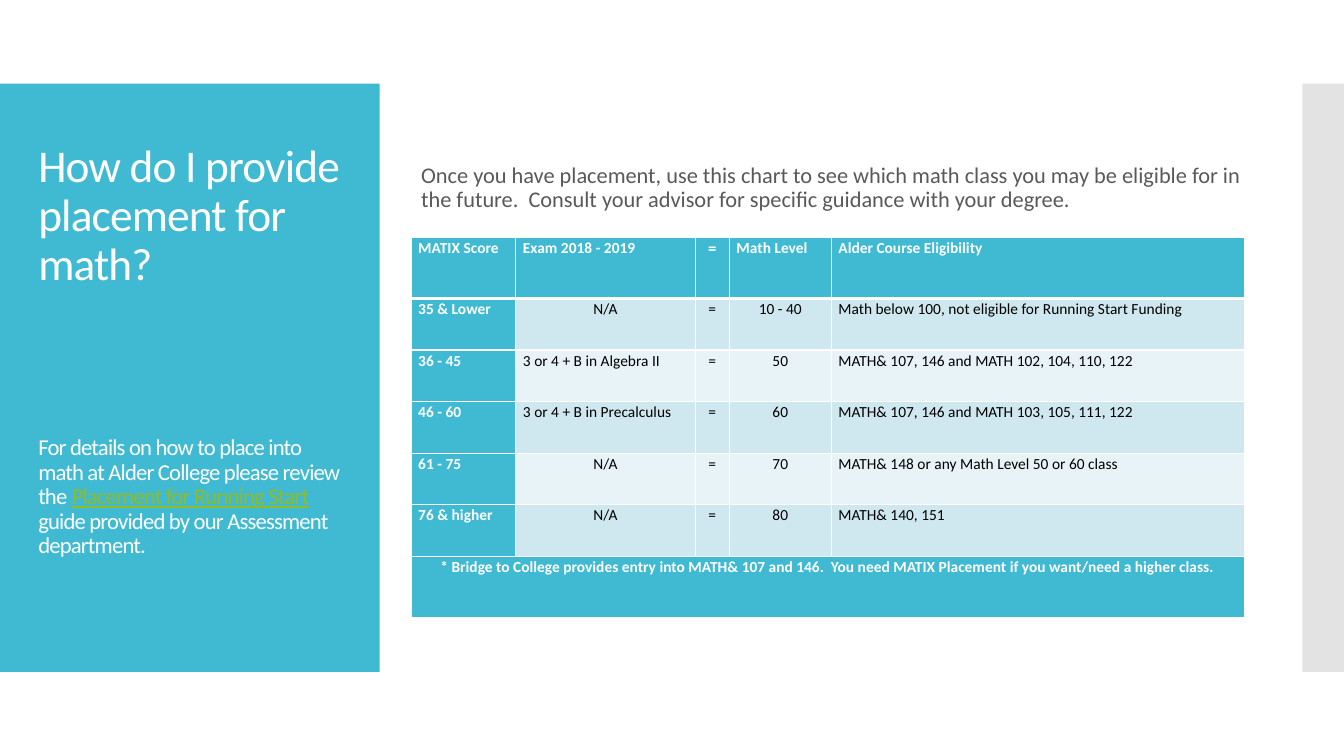
from lxml.etree import SubElement
from pptx import Presentation
from pptx.dml.color import RGBColor
from pptx.enum.shapes import MSO_SHAPE
from pptx.enum.text import MSO_ANCHOR, MSO_AUTO_SIZE, PP_ALIGN
from pptx.oxml.ns import qn
from pptx.util import Cm, Pt

TEAL, WHITE, BLACK = "40BAD2", "FFFFFF", "000000"
BANDS = ("CFE7EE", "E8F3F7")
COLUMN_WIDTHS = (2.64, 4.52, 0.86, 2.57, 10.41)
ROW_HEIGHTS = (1.55, 1.3, 1.3, 1.3, 1.3, 1.3, 1.55)
HEADINGS = ("MATIX Score", "Exam 2018 - 2019", "=", "Math Level",
            "Alder Course Eligibility")
PLACEMENTS = (
    ("35 & Lower", "N/A", "10 - 40",
     "Math below 100, not eligible for Running Start Funding"),
    ("36 - 45", "3 or 4 + B in Algebra II", "50",
     "MATH& 107, 146 and MATH 102, 104, 110, 122"),
    ("46 - 60", "3 or 4 + B in Precalculus", "60",
     "MATH& 107, 146 and MATH 103, 105, 111, 122"),
    ("61 - 75", "N/A", "70", "MATH& 148 or any Math Level 50 or 60 class"),
    ("76 & higher", "N/A", "80", "MATH& 140, 151"),
)
BRIDGE_NOTE = ("* Bridge to College provides entry into MATH& 107 and 146.  "
               "You need MATIX Placement if you want/need a higher class.")


def rgb(value):
    return RGBColor.from_string(value)


def add_text(paragraph, text, size=11, color=BLACK, bold=False, underline=False,
             tracking=0, align=PP_ALIGN.LEFT, spacing=0.9, before=0):
    """Append a run; tracking is in hundredths of a point."""
    paragraph.alignment = align
    paragraph.line_spacing = spacing
    paragraph.space_before = Pt(before)
    run = paragraph.add_run()
    run.text = text
    font = run.font
    font.name, font.size = "Calibri", Pt(size)
    font.bold, font.underline = bold, underline
    font.color.rgb = rgb(color)
    if tracking:
        font._element.set("spc", str(tracking))


def add_panel(slide, left, width, color, opacity=100):
    """Add a side band behind the placeholders."""
    panel = slide.shapes.add_shape(MSO_SHAPE.RECTANGLE, Cm(left), Cm(2.11),
                                   Cm(width), Cm(14.82))
    panel.shadow.inherit = False
    panel.fill.solid()
    panel.fill.fore_color.rgb = rgb(color)
    panel.line.fill.background()
    if opacity < 100:
        tint = panel.element.spPr.find(".//" + qn("a:srgbClr"))
        SubElement(tint, qn("a:alpha"), val=str(opacity * 1000))
    panel.element.getparent().insert(2, panel.element)


def place(placeholder, left, top, width, height, top_inset=0.0):
    placeholder.left, placeholder.top = Cm(left), Cm(top)
    placeholder.width, placeholder.height = Cm(width), Cm(height)
    frame = placeholder.text_frame
    frame.word_wrap = True
    frame.auto_size = MSO_AUTO_SIZE.NONE
    frame.vertical_anchor = MSO_ANCHOR.TOP
    frame.margin_top = Cm(top_inset)
    return frame


def fill_title(title):
    frame = place(title, 0.71, 3.12, 8.18, 12.78, top_inset=0.5)
    add_text(frame.paragraphs[0], "How do I provide placement for math?",
             size=32.4, color=WHITE, tracking=-60)
    details = frame.add_paragraph()
    for text, color, linked in (
            ("For details on how to place into math at Alder College please "
             "review the ", WHITE, False),
            ("Placement for Running Start", "90BB23", True),
            (" guide provided by our Assessment department.", WHITE, False)):
        add_text(details, text, size=16.2, color=color, underline=linked,
                 tracking=-60, before=104)


def fill_intro(body):
    intro = place(body, 10.36, 4.14, 21.67, 1.6).paragraphs[0]
    add_text(intro, "Once you have placement, use this chart to see which math "
             "class you may be eligible for in the future.  Consult your advisor "
             "for specific guidance with your degree.", size=16, color="595959")
    properties = intro._p.get_or_add_pPr()
    properties.set("marL", "0")
    properties.set("indent", "0")
    SubElement(properties, qn("a:buNone"))


def set_borders(cell, bottom=1):
    properties = cell._tc.get_or_add_tcPr()
    for side, width in (("L", 1), ("R", 1), ("T", 1), ("B", bottom)):
        line = SubElement(properties, qn("a:ln" + side), w=str(Pt(width)))
        paint = SubElement(line, qn("a:solidFill"))
        SubElement(paint, qn("a:srgbClr"), val=WHITE)


def fill_cell(cell, text, fill, bottom=1, **text_format):
    set_borders(cell, bottom)
    cell.fill.solid()
    cell.fill.fore_color.rgb = rgb(fill)
    cell.margin_left = cell.margin_right = Cm(0.18)
    cell.margin_top = cell.margin_bottom = 0
    add_text(cell.text_frame.paragraphs[0], text, spacing=1.07, **text_format)


def add_eligibility_table(slide):
    table = slide.shapes.add_table(
        len(ROW_HEIGHTS), len(COLUMN_WIDTHS), Cm(10.36), Cm(5.97),
        Cm(sum(COLUMN_WIDTHS)), Cm(sum(ROW_HEIGHTS))).table
    table.first_row = table.horz_banding = False
    for column, width in zip(table.columns, COLUMN_WIDTHS):
        column.width = Cm(width)
    for row, height in zip(table.rows, ROW_HEIGHTS):
        row.height = Cm(height)

    strong = {"color": WHITE, "bold": True}
    for column, heading in enumerate(HEADINGS):
        equals = heading == "="
        fill_cell(table.cell(0, column), heading, TEAL, bottom=3,
                  size=12 if equals else 11,
                  align=PP_ALIGN.CENTER if equals else PP_ALIGN.LEFT, **strong)
    for row, (score, exam, level, courses) in enumerate(PLACEMENTS, 1):
        band = BANDS[(row - 1) % 2]
        fill_cell(table.cell(row, 0), score, TEAL, **strong)
        for column, text in enumerate((exam, "=", level, courses), 1):
            centred = column in (2, 3) or text == "N/A"
            fill_cell(table.cell(row, column), text, band,
                      align=PP_ALIGN.CENTER if centred else PP_ALIGN.LEFT)
    last = len(ROW_HEIGHTS) - 1
    note = table.cell(last, 0)
    note.merge(table.cell(last, len(COLUMN_WIDTHS) - 1))
    fill_cell(note, BRIDGE_NOTE, TEAL, align=PP_ALIGN.CENTER, **strong)


def main():
    deck = Presentation()
    deck.slide_width, deck.slide_height = Cm(33.87), Cm(19.05)
    slide = deck.slides.add_slide(deck.slide_layouts[1])
    add_panel(slide, 0, 9.57, TEAL)
    add_panel(slide, 32.82, 1.05, "C8C8C8", opacity=50)
    fill_title(slide.shapes.title)
    fill_intro(slide.placeholders[1])
    add_eligibility_table(slide)
    deck.save("out.pptx")


if __name__ == "__main__":
    main()
